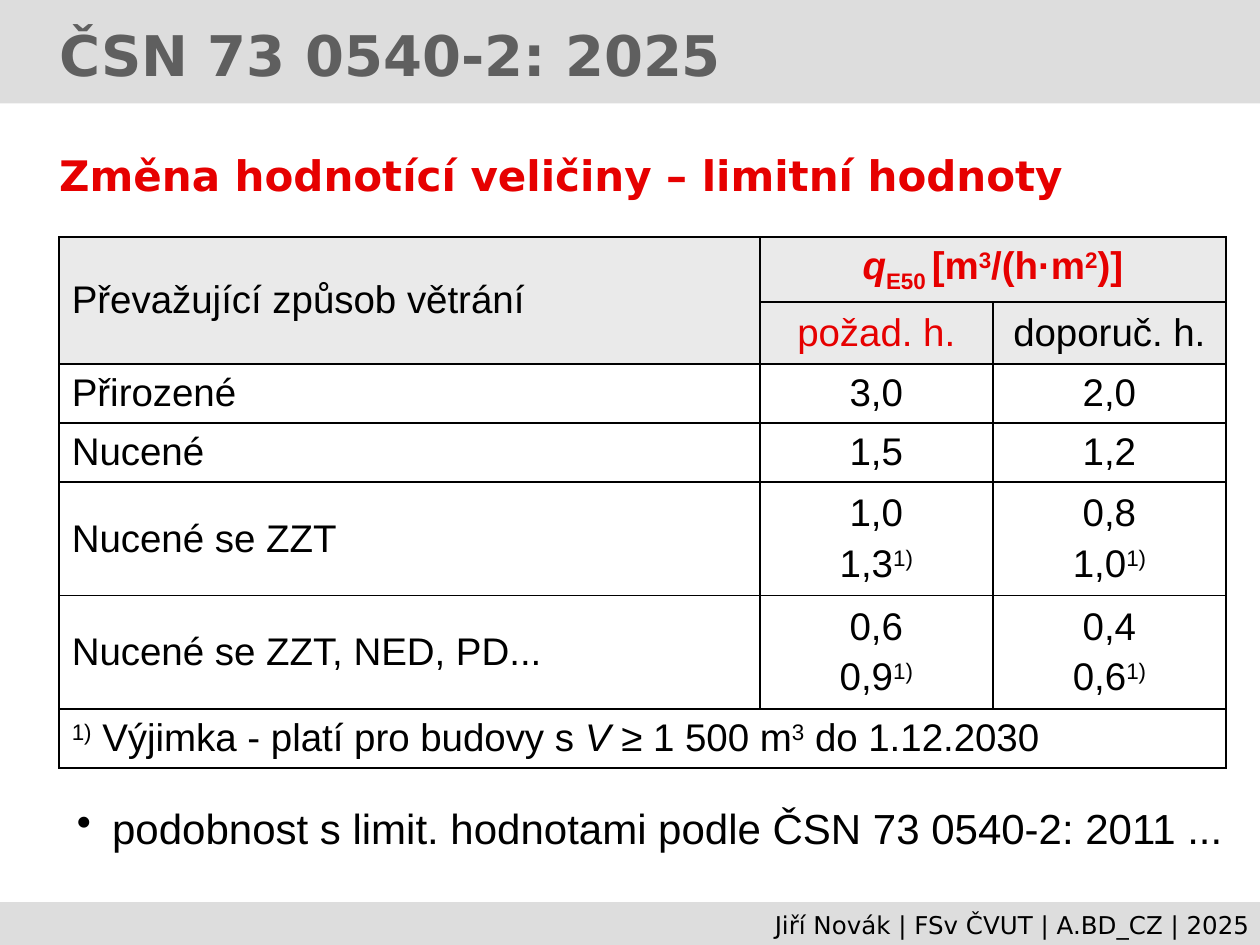
from dataclasses import dataclass

from pptx import Presentation, util as u
from pptx.dml.color import RGBColor
from pptx.enum import shapes, text
from pptx.oxml import parse_xml
from pptx.oxml.ns import nsdecls


@dataclass(frozen=True)
class Theme:
    head_font: str = "DejaVu Sans"
    body_font: str = "Arial"
    band: str = "DDDDDD"
    header: str = "EAEAEA"
    grey: str = "5F5F5F"
    red: str = "E60000"
    black: str = "000000"
    title: int = 32
    body: int = 24
    cell: int = 22
    footer: int = 14


theme = Theme()
BASELINES = {"sup": "30000", "sub": "-25000"}


def add_span(para, words, font, size, color, style=""):
    """Add one run; style holds words such as 'bold italic sup'."""
    span = para.add_run()
    span.text = words
    span.font.name = font
    span.font.size = u.Pt(size)
    span.font.color.rgb = RGBColor.from_string(color)
    span.font.bold = "bold" in style
    span.font.italic = "italic" in style
    for name, shift in BASELINES.items():
        if name in style:
            span._r.get_or_add_rPr().set("baseline", shift)


def set_frame(frame, left, top, right, bottom):
    """Set insets in inches and return the first paragraph."""
    frame.word_wrap = True
    frame.vertical_anchor = text.MSO_ANCHOR.TOP
    frame.margin_left, frame.margin_top = u.Inches(left), u.Inches(top)
    frame.margin_right, frame.margin_bottom = u.Inches(right), u.Inches(bottom)
    frame.paragraphs[0].alignment = text.PP_ALIGN.LEFT
    return frame.paragraphs[0]


deck = Presentation()
deck.slide_width, deck.slide_height = u.Inches(10), u.Inches(7.5)
page = deck.slides.add_slide(deck.slide_layouts[6])

# Title and footer bands
bands = [
    (0, 0.82, (0.47, 0.16, 0, 0.12), text.PP_ALIGN.LEFT,
     ("ČSN 73 0540-2: 2025", theme.head_font, theme.title, theme.grey, "bold")),
    (7.16, 0.34, (0.47, 0.06, 0.08, 0.06), text.PP_ALIGN.RIGHT,
     ("Jiří Novák | FSv ČVUT | A.BD_CZ | 2025", theme.head_font, theme.footer, theme.black)),
]
for top, height, insets, alignment, wording in bands:
    band = page.shapes.add_shape(shapes.MSO_SHAPE.RECTANGLE, 0, u.Inches(top),
                                 u.Inches(10), u.Inches(height))
    band.shadow.inherit = False
    band.fill.solid()
    band.fill.fore_color.rgb = RGBColor.from_string(theme.band)
    band.line.fill.background()
    para = set_frame(band.text_frame, *insets)
    para.alignment = alignment
    add_span(para, *wording)

# Subtitle
box = page.shapes.add_textbox(u.Inches(0.47), u.Inches(1.19), u.Inches(9.45), u.Inches(0.4))
para = set_frame(box.text_frame, 0, 0, 0, 0)
add_span(para, "Změna hodnotící veličiny – limitní hodnoty",
         theme.head_font, theme.body, theme.red, "bold")

# Table content: row, column -> paragraphs of (words, style) runs
content = {
    (0, 0): [[("Převažující způsob větrání", "")]],
    (0, 1): [[("q", "red bold italic"), ("E50 ", "red bold sub"), ("[m", "red bold"),
              ("3", "red bold sup"), ("/(h·m", "red bold"), ("2", "red bold sup"),
              (")]", "red bold")]],
    (1, 1): [[("požad. h.", "red")]],
    (1, 2): [[("doporuč. h.", "")]],
    (6, 0): [[("1)", "sup"), (" Výjimka - platí pro budovy s ", ""), ("V", "italic"),
              (" ≥ 1 500 m", ""), ("3", "sup"), (" do 1.12.2030", "")]],
}
limits = [
    ("Přirozené", ["3,0"], ["2,0"]),
    ("Nucené", ["1,5"], ["1,2"]),
    ("Nucené se ZZT", ["1,0", "1,3"], ["0,8", "1,0"]),
    ("Nucené se ZZT, NED, PD...", ["0,6", "0,9"], ["0,4", "0,6"]),
]
for row, (label, *values) in enumerate(limits, start=2):
    content[row, 0] = [[(label, "")]]
    for column, figures in enumerate(values, start=1):
        content[row, column] = [[(figures[0], "")]]
        for exception in figures[1:]:
            content[row, column].append([(exception, ""), ("1)", "sup")])

# Table grid
widths = [5.56, 1.85, 1.85]
heights = [0.51, 0.49, 0.47, 0.47, 0.9, 0.9, 0.47]
table = page.shapes.add_table(len(heights), len(widths), u.Inches(0.47), u.Inches(1.88),
                              u.Inches(sum(widths)), u.Inches(sum(heights))).table
table.first_row = table.horz_banding = False
for column, width in zip(table.columns, widths):
    column.width = u.Inches(width)
for row, height in zip(table.rows, heights):
    row.height = u.Inches(height)
for first, last in [((0, 0), (1, 0)), ((0, 1), (0, 2)), ((6, 0), (6, 2))]:
    table.cell(*first).merge(table.cell(*last))

# Table cells: borders, fill and text
for row in range(len(heights)):
    for column in range(len(widths)):
        cell = table.cell(row, column)
        properties = cell._tc.get_or_add_tcPr()
        for side in ("lnL", "lnR", "lnT", "lnB"):
            properties.append(parse_xml(
                f'<a:{side} {nsdecls("a")} w="12700"><a:solidFill>'
                f'<a:srgbClr val="{theme.black}"/></a:solidFill></a:{side}>'))
        if row < 2:
            cell.fill.solid()
            cell.fill.fore_color.rgb = RGBColor.from_string(theme.header)
        else:
            cell.fill.background()
        cell.vertical_anchor = text.MSO_ANCHOR.MIDDLE
        cell.margin_left = cell.margin_right = u.Inches(0.1)
        cell.margin_top = cell.margin_bottom = u.Inches(0.05)
        for index, spans in enumerate(content.get((row, column), [])):
            para = cell.text_frame.add_paragraph() if index else cell.text_frame.paragraphs[0]
            para.alignment = text.PP_ALIGN.CENTER if column else text.PP_ALIGN.LEFT
            if index:
                para.space_before = u.Pt(0.2 * theme.cell)
            for words, style in spans:
                color = theme.red if "red" in style else theme.black
                add_span(para, words, theme.body_font, theme.cell, color, style)

# Closing bullet
box = page.shapes.add_textbox(u.Inches(0.47), u.Inches(6.27), u.Inches(9.45), u.Inches(0.47))
para = set_frame(box.text_frame, 0.12, 0.08, 0, 0)
para.line_spacing = 1.05
properties = para._p.get_or_add_pPr()
properties.set("marL", str(u.Inches(0.3)))
properties.set("indent", str(u.Inches(-0.28)))
properties.append(parse_xml(f'<a:buChar {nsdecls("a")} char="•"/>'))
add_span(para, "podobnost s limit. hodnotami podle ČSN 73 0540-2: 2011 ...",
         theme.body_font, theme.body, theme.black)

deck.save("out.pptx")
